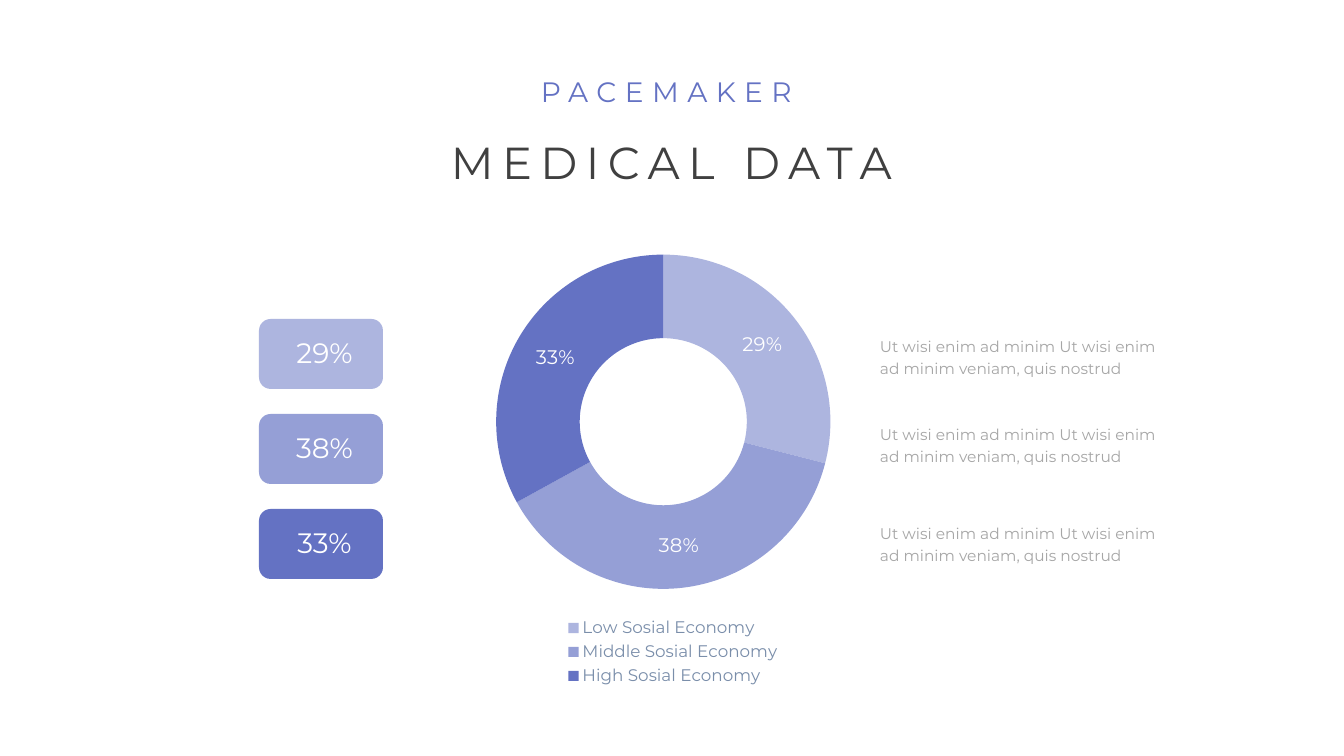
from dataclasses import dataclass

from lxml import etree
from pptx import Presentation
from pptx import util as u
from pptx.chart.data import CategoryChartData
from pptx.dml.color import RGBColor
from pptx.enum import chart as ch, shapes, text
from pptx.oxml import ns

EMU_PER_PX = 914400 / 100.8
FONT = "Montserrat"
WHITE = RGBColor(0xFF, 0xFF, 0xFF)
BLACK = RGBColor(0x00, 0x00, 0x00)
LIGHT = RGBColor(0xAD, 0xB5, 0xDF)
MEDIUM = RGBColor(0x95, 0x9F, 0xD6)
DEEP = RGBColor(0x64, 0x72, 0xC3)
CHARCOAL = RGBColor(0x40, 0x40, 0x40)
GREY = RGBColor(0xA6, 0xA6, 0xA6)
SLATE = RGBColor(0x7A, 0x8E, 0xAA)


@dataclass(frozen=True)
class Group:
    name: str
    percent: int
    color: RGBColor


GROUPS = [
    Group("Low Sosial Economy", 29, LIGHT),
    Group("Middle Sosial Economy", 38, MEDIUM),
    Group("High Sosial Economy", 33, DEEP),
]
NOTE = "Ut wisi enim ad minim Ut wisi enim ad minim veniam, quis nostrud"
NOTE_TOPS = [328, 416, 515]
BADGE_TOP, BADGE_PITCH = 319, 95
PLOT = {"x": 0.105, "y": 0.095, "w": 0.747, "h": 0.695}


def px(n: int) -> u.Emu:
    return u.Emu(round(n * EMU_PER_PX))


def box(x: int, y: int, w: int, h: int) -> tuple:
    return px(x), px(y), px(w), px(h)


def style(font, size: int, color: RGBColor) -> None:
    font.name = FONT
    font.size = u.Pt(size)
    font.color.rgb = color


def add_text(s, words: str, bounds: tuple, *, size: int, color: RGBColor,
             align=text.PP_ALIGN.LEFT, leading: float = 1.0,
             tracking: int = 0, wrap: bool = True) -> None:
    tf = s.shapes.add_textbox(*bounds).text_frame
    tf.word_wrap = wrap
    tf.auto_size = text.MSO_AUTO_SIZE.SHAPE_TO_FIT_TEXT
    p = tf.paragraphs[0]
    p.alignment = align
    p.line_spacing = leading
    r = p.add_run()
    r.text = words
    style(r.font, size, color)
    if tracking:
        r.font._element.set("spc", str(tracking * 100))


def add_badge(s, group: Group, top: int) -> None:
    sp = s.shapes.add_shape(shapes.MSO_SHAPE.ROUNDED_RECTANGLE,
                            *box(259, top, 124, 70))
    sp.shadow.inherit = False
    sp.fill.solid()
    sp.fill.fore_color.rgb = group.color
    sp.line.fill.background()
    add_text(s, f"{group.percent}%", box(255, top + 12, 139, 44),
             size=20, color=WHITE, align=text.PP_ALIGN.CENTER)


def set_plot_layout(chart) -> None:
    area = chart._chartSpace.find(".//" + ns.qn("c:plotArea"))
    for old in area.findall(ns.qn("c:layout")):
        area.remove(old)
    layout = etree.Element(ns.qn("c:layout"))
    area.insert(0, layout)
    manual = etree.SubElement(layout, ns.qn("c:manualLayout"))
    settings = {"layoutTarget": "inner", "xMode": "edge", "yMode": "edge", **PLOT}
    for tag, value in settings.items():
        etree.SubElement(manual, ns.qn(f"c:{tag}")).set("val", str(value))


def add_doughnut(s, groups: list[Group]) -> None:
    data = CategoryChartData()
    data.categories = [g.name for g in groups]
    data.add_series("Series 1", [g.percent for g in groups])
    chart = s.shapes.add_chart(ch.XL_CHART_TYPE.DOUGHNUT,
                               *box(449, 209, 448, 481), data).chart
    style(chart.font, 10, BLACK)
    chart.has_title = False
    chart.has_legend = True
    chart.legend.position = ch.XL_LEGEND_POSITION.BOTTOM
    chart.legend.include_in_layout = False
    style(chart.legend.font, 12, SLATE)
    plot = chart.plots[0]
    plot.vary_by_categories = True
    for i, group in enumerate(groups):
        point = plot.series[0].points[i].format
        point.fill.solid()
        point.fill.fore_color.rgb = group.color
        point.line.fill.background()
    labels = plot.series[0].data_labels
    labels.show_percentage = True
    labels.show_value = False
    labels.number_format = "0%"
    labels.number_format_is_linked = False
    style(labels.font, 14, WHITE)
    set_plot_layout(chart)


def main() -> None:
    prs = Presentation()
    prs.slide_width, prs.slide_height = px(1344), px(756)
    s = prs.slides.add_slide(prs.slide_layouts[6])
    add_doughnut(s, GROUPS)
    for i, group in enumerate(GROUPS):
        add_badge(s, group, BADGE_TOP + i * BADGE_PITCH)
    for top in NOTE_TOPS:
        add_text(s, NOTE, box(870, top, 311, 53), size=11, color=GREY, leading=1.2)
    add_text(s, "MEDICAL DATA", box(148, 130, 1047, 65), size=32,
             color=CHARCOAL, align=text.PP_ALIGN.CENTER, tracking=6)
    add_text(s, "PACEMAKER", box(531, 70, 282, 44), size=20,
             color=DEEP, tracking=6, wrap=False)
    prs.save("out.pptx")


if __name__ == "__main__":
    main()
